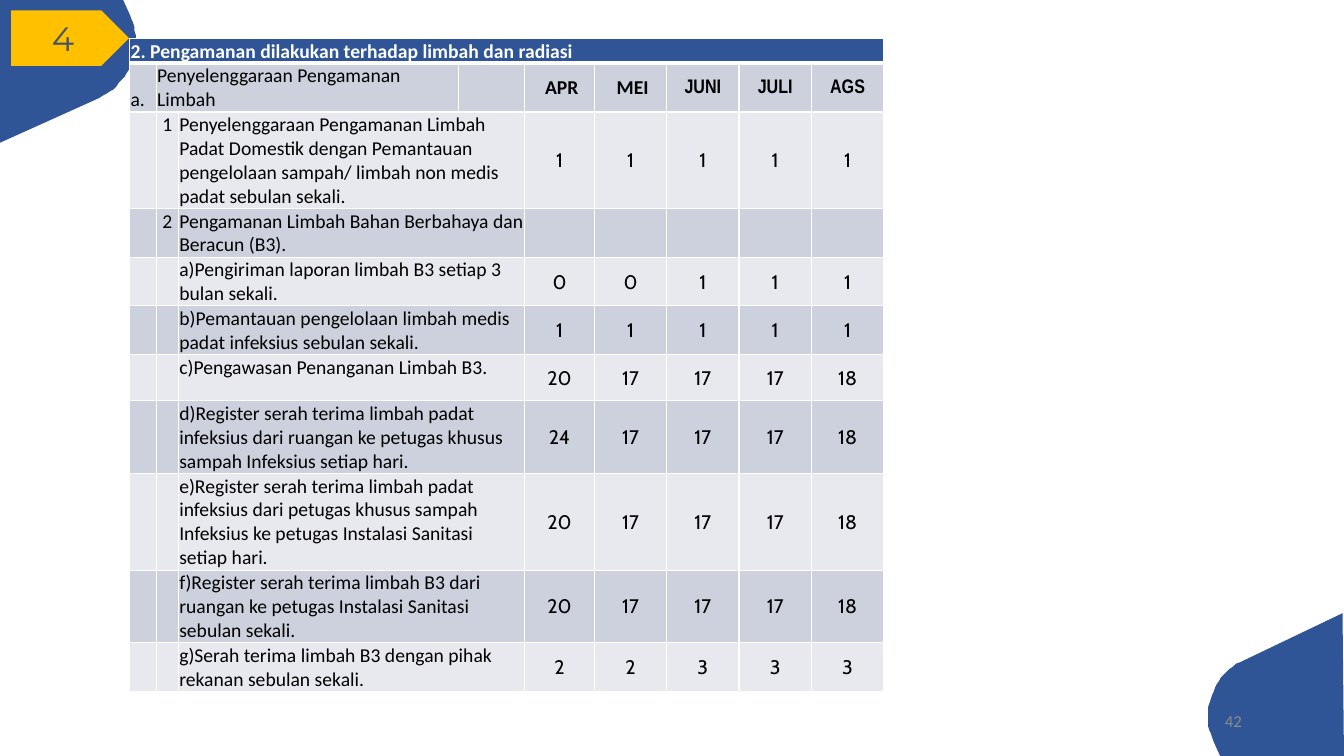
from lxml import etree
from pptx import Presentation
from pptx.dml.color import RGBColor
from pptx.enum import shapes, text
from pptx.oxml.ns import qn
from pptx.util import Pt

# Content
TITLE = "2. Pengamanan dilakukan terhadap limbah dan radiasi"
GROUP = ("a.", "Penyelenggaraan Pengamanan Limbah")
MONTHS = [" APR", " MEI", "JUNI", "JULI", "AGS"]
# number, activity, monthly values, lines of text
TASKS = [
    ("1", "Penyelenggaraan Pengamanan Limbah Padat Domestik dengan Pemantauan "
     "pengelolaan sampah/ limbah non medis padat sebulan sekali.", (1, 1, 1, 1, 1), 4),
    ("2", "Pengamanan Limbah Bahan Berbahaya dan Beracun (B3).", (), 2),
    ("", "a)Pengiriman laporan limbah B3 setiap 3 bulan sekali.", (0, 0, 1, 1, 1), 2),
    ("", "b)Pemantauan pengelolaan limbah medis padat infeksius sebulan sekali.",
     (1, 1, 1, 1, 1), 2),
    ("", "c)Pengawasan Penanganan Limbah B3.", (20, 17, 17, 17, 18), 1.9),
    ("", "d)Register serah terima limbah padat infeksius dari ruangan ke petugas "
     "khusus sampah Infeksius setiap hari.", (24, 17, 17, 17, 18), 3),
    ("", "e)Register serah terima limbah padat infeksius dari petugas khusus sampah "
     "Infeksius ke petugas Instalasi Sanitasi setiap hari.", (20, 17, 17, 17, 18), 4),
    ("", "f)Register serah terima limbah B3 dari ruangan ke petugas Instalasi "
     "Sanitasi sebulan sekali.", (20, 17, 17, 17, 18), 3),
    ("", "g)Serah terima limbah B3 dengan pihak rekanan sebulan sekali.",
     (2, 2, 3, 3, 3), 2),
]
WIDTHS = [19, 15.8, 200, 47.5, 49.7, 51.7, 51.7, 51.7, 51.7]
LINE = 17.1

# Corners: start, lines to the curve, curve (two handles and end), closing line
CORNERS = [
    ([(960, 540), (872, 540.7), (866.9, 529.9)],
     [(856.8, 508.3), (866.2, 481.7), (888.5, 471.6)], (959, 438.5)),
    ([(0, 0), (87.8, 0), (92.9, 10.8)],
     [(103, 33.1), (92.9, 59.8), (71.3, 69.8)], (0, 102.2)),
]

BLUE = RGBColor(0x2F, 0x55, 0x97)
GOLD = RGBColor(0xFF, 0xC0, 0x00)
SLATE = RGBColor(0x44, 0x54, 0x6A)
GREY = RGBColor(0x8C, 0x8C, 0x8C)
DARK = RGBColor(0xCD, 0xD1, 0xDD)
LIGHT = RGBColor(0xE8, 0xE9, 0xEF)
WHITE = RGBColor(0xFF, 0xFF, 0xFF)
BLACK = RGBColor(0, 0, 0)
LEFT, MID, RIGHT = text.PP_ALIGN.LEFT, text.PP_ALIGN.CENTER, text.PP_ALIGN.RIGHT
TOP, CENTRE, LOW = (text.MSO_ANCHOR.TOP, text.MSO_ANCHOR.MIDDLE,
                    text.MSO_ANCHOR.BOTTOM)


def style(par, face, size, color, align, bold=False):
    par.alignment = align
    font = par.font
    font.name, font.size, font.bold = face, Pt(size), bold
    font.color.rgb = color


def paint(shape, color):
    shape.shadow.inherit = False
    shape.fill.solid()
    shape.fill.fore_color.rgb = color
    shape.line.fill.background()


def curve(start, one, two, end, steps=24):
    """Points along a cubic curve."""
    for i in range(1, steps + 1):
        t = i / steps
        parts = ((1 - t) ** 3, 3 * t * (1 - t) ** 2, 3 * t * t * (1 - t), t ** 3)
        yield tuple(sum(k * p[axis] for k, p in zip(parts, (start, one, two, end)))
                    for axis in (0, 1))


def border(cell, low=1):
    props = cell._tc.get_or_add_tcPr()
    for side in ("lnL", "lnR", "lnT", "lnB"):
        width = low if side == "lnB" else 1
        line = etree.SubElement(props, qn("a:" + side), w=str(Pt(width)))
        fill = etree.SubElement(line, qn("a:solidFill"))
        etree.SubElement(fill, qn("a:srgbClr"), val=str(WHITE))


def write(cell, words, face="Calibri", align=LEFT, anchor=TOP, bold=False,
          color=BLACK):
    cell.text = str(words)
    cell.vertical_anchor = anchor
    style(cell.text_frame.paragraphs[0], face, 14, color, align, bold)


def add_corners(slide):
    for start, bend, last in CORNERS:
        points = start[1:] + list(curve(start[-1], *bend)) + [last]
        build = slide.shapes.build_freeform(*start[0], scale=Pt(1))
        build.add_line_segments(points, close=True)
        paint(build.convert_to_shape(), BLUE)


def add_badge(slide):
    badge = slide.shapes.add_shape(shapes.MSO_SHAPE.PENTAGON,
                                   Pt(8), Pt(7.4), Pt(84.2), Pt(39.6))
    paint(badge, GOLD)
    badge.text_frame.text = "4"
    badge.text_frame.vertical_anchor = CENTRE
    style(badge.text_frame.paragraphs[0], "Montserrat", 24.1, SLATE, MID)


def add_grid(slide):
    lines = [1, 2] + [task[3] for task in TASKS]
    heights = [LINE * n + 0.6 for n in lines]
    table = slide.shapes.add_table(len(lines), len(WIDTHS), Pt(92.6), Pt(27.4),
                                   Pt(sum(WIDTHS)), Pt(sum(heights))).table
    for col, width in zip(table.columns, WIDTHS):
        col.width = Pt(width)

    # Base look of every cell
    for r, height in enumerate(heights):
        table.rows[r].height = Pt(height)
        for cell in table.rows[r].cells:
            border(cell, 1 if r else 3)
            cell.fill.solid()
            cell.fill.fore_color.rgb = (DARK if r % 2 else LIGHT) if r else BLUE
            cell.margin_left = cell.margin_right = cell.margin_top = Pt(0.7)
            cell.margin_bottom = 0
            write(cell, "")

    # Title and month rows
    table.cell(0, 0).merge(table.cell(0, 8))
    write(table.cell(0, 0), TITLE, anchor=LOW, bold=True, color=WHITE)
    table.cell(1, 1).merge(table.cell(1, 2))
    write(table.cell(1, 0), GROUP[0], anchor=LOW)
    write(table.cell(1, 1), GROUP[1])
    for c, month in enumerate(MONTHS, 4):
        face = "Calibri" if c < 6 else "Arial Narrow"
        write(table.cell(1, c), month, face, MID, CENTRE, True)

    # Activity rows
    for r, (mark, task, counts, _) in enumerate(TASKS, 2):
        table.cell(r, 2).merge(table.cell(r, 3))
        write(table.cell(r, 1), mark, align=MID)
        write(table.cell(r, 2), task)
        for c, count in enumerate(counts, 4):
            write(table.cell(r, c), count, "Cabin", MID, CENTRE)


def add_page(slide):
    frame = slide.shapes.add_textbox(Pt(678.2), Pt(500.4), Pt(216),
                                     Pt(28.8)).text_frame
    frame.word_wrap = True
    frame.vertical_anchor = CENTRE
    frame.text = "42"
    style(frame.paragraphs[0], "Calibri", 12, GREY, RIGHT)


def main():
    deck = Presentation()
    deck.slide_width, deck.slide_height = Pt(960), Pt(540)
    slide = deck.slides.add_slide(deck.slide_layouts[6])
    add_corners(slide)
    add_badge(slide)
    add_grid(slide)
    add_page(slide)
    deck.save("out.pptx")


if __name__ == "__main__":
    main()
